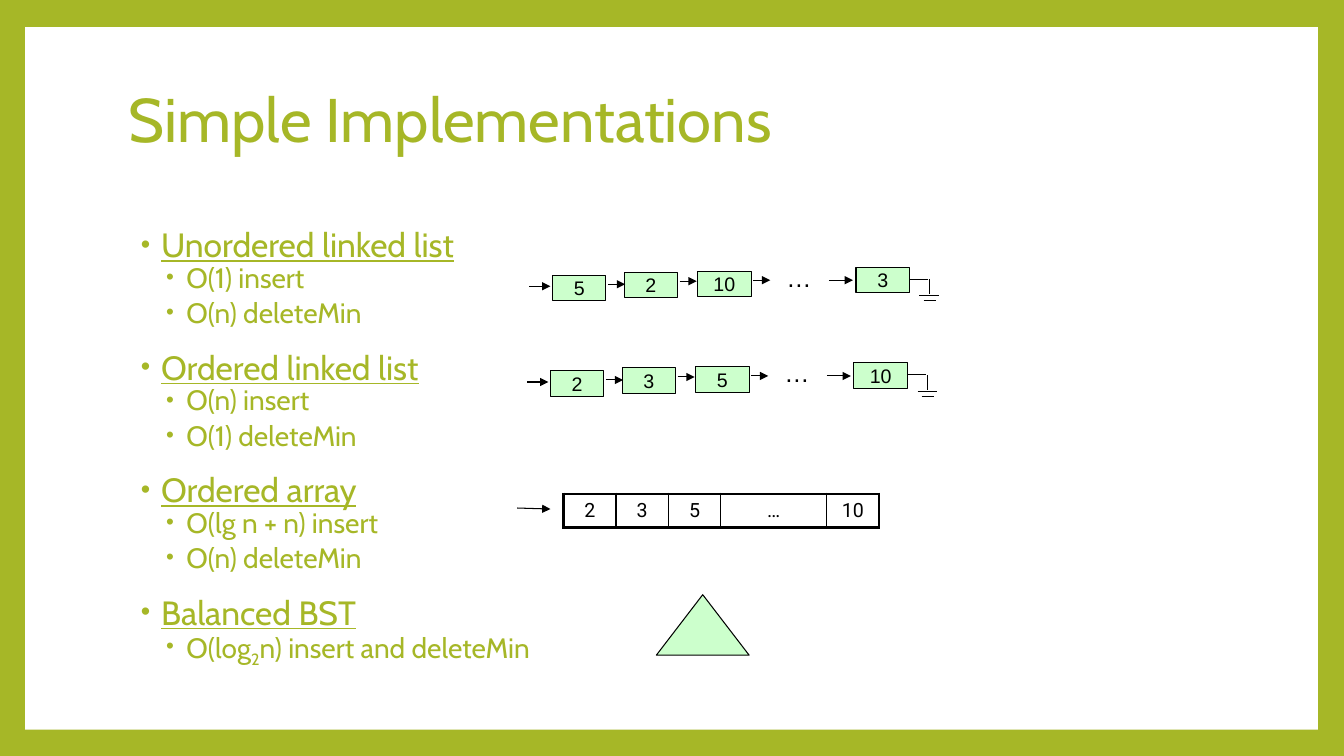
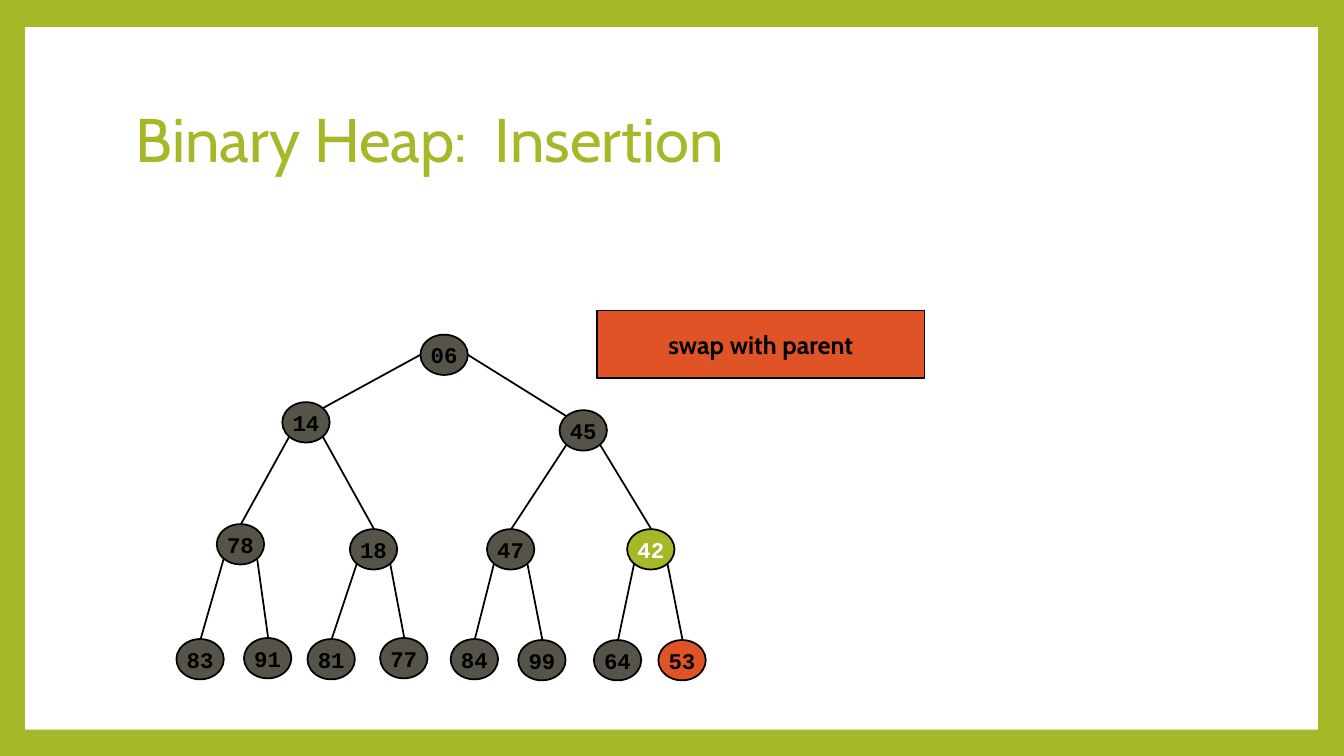
from dataclasses import dataclass

from lxml.etree import SubElement
from pptx import Presentation
from pptx.dml.color import RGBColor
from pptx.enum.shapes import MSO_CONNECTOR, MSO_SHAPE
from pptx.enum.text import MSO_ANCHOR, PP_ALIGN
from pptx.oxml.ns import qn
from pptx.util import Emu, Pt

SCALE = 9144  # EMU in one px, at 100 px to the inch


def px(length):
    return Emu(round(length * SCALE))


# ---- Theme: colours, fonts, type sizes, line widths ----
@dataclass(frozen=True)
class Theme:
    green: str = "A6B727"
    white: str = "FFFFFF"
    black: str = "000000"
    mint: str = "CCFFCC"
    stone: str = "565349"
    orange: str = "DF5327"
    main_font: str = "Cabin"
    node_font: str = "Arial"
    cell_font: str = "Roboto"
    heap_font: str = "Courier New"
    title_size: int = 44
    heading_size: int = 24
    detail_size: int = 20
    label_size: int = 18
    key_size: int = 16
    node_size: int = 14
    thin: float = 0.75
    rule: float = 1
    medium: float = 1.25
    thick: float = 2.25


THEME = Theme()


# ---- Content ----
# Each group is a heading and its details; every second run of a detail is a subscript.
IMPLEMENTATIONS = [
    ("Unordered linked list", [["O(1) insert"], ["O(n) deleteMin"]]),
    ("Ordered linked list", [["O(n) insert"], ["O(1) deleteMin"]]),
    ("Ordered array", [["O(lg n + n) insert"], ["O(n) deleteMin"]]),
    ("Balanced BST", [["O(log", "2", "n) insert and deleteMin"]]),
]

# Level order: key, left, top; the children of node i are 2i + 1 and 2i + 2.
HEAP = [
    ("06", 417, 332),
    ("14", 280, 399), ("45", 555, 407),
    ("78", 215, 520), ("18", 347, 525), ("47", 483, 525), ("42", 622, 525),
    ("83", 175, 634), ("91", 242, 633), ("81", 305, 634), ("77", 377, 633),
    ("84", 447, 634), ("99", 514, 635), ("64", 589, 635), ("53", 653, 635),
]
HEAP_WIDTH, HEAP_HEIGHT = 47, 40
HIGHLIGHTS = {"42": (THEME.green, THEME.white), "53": (THEME.orange, THEME.black)}


# ---- Elements ----
def rgb(color):
    return RGBColor.from_string(color)


def add_span(para, text, size, font, color, bold=None, underline=None):
    span = para.add_run()
    span.text = text
    span.font.size = Pt(size)
    span.font.name = font
    span.font.color.rgb = rgb(color)
    span.font.bold = bold
    span.font.underline = underline
    return span


def add_box(page, left, top, width, height, anchor=MSO_ANCHOR.TOP, wrap=True):
    box = page.shapes.add_textbox(px(left), px(top), px(width), px(height))
    box.text_frame.word_wrap = wrap
    box.text_frame.vertical_anchor = anchor
    return box.text_frame


def add_figure(page, kind, left, top, width, height, fill, line_width=None):
    shape = page.shapes.add_shape(kind, px(left), px(top), px(width), px(height))
    shape.shadow.inherit = False
    shape.fill.solid()
    shape.fill.fore_color.rgb = rgb(fill)
    if line_width is None:
        shape.line.fill.background()
    else:
        shape.line.color.rgb = rgb(THEME.black)
        shape.line.width = Pt(line_width)
    return shape


def add_label(shape, text, size, font, color=THEME.black, bold=None):
    frame = shape.text_frame
    frame.word_wrap = False
    frame.vertical_anchor = MSO_ANCHOR.MIDDLE
    frame.margin_left = frame.margin_right = frame.margin_top = frame.margin_bottom = 0
    para = frame.paragraphs[0]
    para.alignment = PP_ALIGN.CENTER
    add_span(para, text, size, font, color, bold)


def add_line(page, start, end, width=THEME.thin, arrow=False):
    line = page.shapes.add_connector(
        MSO_CONNECTOR.STRAIGHT, *(px(value) for value in (*start, *end)))
    line.line.color.rgb = rgb(THEME.black)
    line.line.width = Pt(width)
    properties = line.element.spPr
    if arrow:
        SubElement(properties.find(qn("a:ln")), qn("a:tailEnd"), type="triangle")
    SubElement(properties, qn("a:effectLst"))


def add_page(deck, title, left, top):
    page = deck.slides.add_slide(deck.slide_layouts[6])
    add_figure(page, MSO_SHAPE.RECTANGLE, 25, 27, 1282, 697, THEME.white)
    para = add_box(page, left, top, 1080, 148, MSO_ANCHOR.MIDDLE).paragraphs[0]
    para.line_spacing = 0.9
    add_span(para, title, THEME.title_size, THEME.main_font, THEME.green)
    return page


def format_bullet(para, indent, before, after):
    para.line_spacing = 0.8
    para.space_before = Pt(before)
    para.space_after = Pt(after)
    properties = para._p.get_or_add_pPr()
    properties.set("marL", str(px(indent)))
    properties.set("indent", str(px(-20)))
    color = SubElement(properties, qn("a:buClr"))
    SubElement(color, qn("a:srgbClr"), val=THEME.green)
    SubElement(properties, qn("a:buSzPct"), val="80000")
    SubElement(properties, qn("a:buFont"), typeface="Arial")
    SubElement(properties, qn("a:buChar"), char="•")


def add_outline(page, groups):
    frame = add_box(page, 125, 225, 1080, 442)
    para = frame.paragraphs[0]
    for number, (heading, details) in enumerate(groups):
        if number:
            para = frame.add_paragraph()
        format_bullet(para, 25, 14, 0)
        add_span(para, heading, THEME.heading_size, THEME.main_font, THEME.green,
                 underline=True)
        for detail in details:
            para = frame.add_paragraph()
            para.level = 1
            format_bullet(para, 50, 2, 4)
            for position, text in enumerate(detail):
                span = add_span(para, text, THEME.detail_size, THEME.main_font, THEME.green)
                if position % 2:
                    span.font._element.set("baseline", "-25000")


def add_linked_list(page, left, top, values):
    """Draw a list whose first node has its corner at left, top."""
    def at(x, y):
        return left + x, top + y

    for value, x, y in zip(values, (0, 71, 144, 301), (0, -3, -4, -8)):
        node = add_figure(page, MSO_SHAPE.RECTANGLE, *at(x, y), 53, 25,
                          THEME.mint, THEME.thin)
        add_label(node, value, THEME.node_size, THEME.node_font)
    for x, y, length in ((-23, 11, 21), (55, 9, 17), (126, 6, 17), (199, 5, 17), (274, 5, 24)):
        add_line(page, at(x, y), at(x + length, y), arrow=True)
    dots = add_box(page, *at(222, -18), 45, 40, wrap=False).paragraphs[0]
    add_span(dots, "…", THEME.label_size, THEME.node_font, THEME.black)
    # Ground symbol: lead, drop and two bars
    for start, end in (((354, 4), (372, 4)), ((374, 4), (374, 19)),
                       ((364, 20), (383, 20)), ((368, 25), (380, 25))):
        add_line(page, at(*start), at(*end))


def add_border(cell, side, width):
    border = SubElement(cell._tc.get_or_add_tcPr(), qn(f"a:ln{side}"), w=str(Pt(width)))
    fill = SubElement(border, qn("a:solidFill"))
    SubElement(fill, qn("a:srgbClr"), val=THEME.black)


def add_array(page, left, top, values, widths, height):
    table = page.shapes.add_table(
        1, len(values), px(left), px(top), px(sum(widths)), px(height)).table
    table.first_row = table.horz_banding = False
    table.rows[0].height = px(height)
    last = len(values) - 1
    for column, (value, width) in enumerate(zip(values, widths)):
        table.columns[column].width = px(width)
        cell = table.cell(0, column)
        add_border(cell, "L", THEME.thick if column == 0 else THEME.rule)
        add_border(cell, "R", THEME.thick if column == last else THEME.rule)
        add_border(cell, "T", THEME.thick)
        add_border(cell, "B", THEME.thick)
        cell.fill.background()
        cell.vertical_anchor = MSO_ANCHOR.MIDDLE
        cell.margin_top = cell.margin_bottom = 0
        para = cell.text_frame.paragraphs[0]
        para.alignment = PP_ALIGN.CENTER
        add_span(para, value, THEME.node_size, THEME.cell_font, THEME.black)


def heap_point(node, across, down):
    """Point on a node, in half widths and half heights from its centre."""
    _, left, top = node
    return (left + round(HEAP_WIDTH / 2 * (1 + across)),
            top + round(HEAP_HEIGHT / 2 * (1 + down)))


def add_heap(page, nodes):
    diagonal = 0.71
    for index in range(1, len(nodes)):
        parent, child = nodes[(index - 1) // 2], nodes[index]
        side = -1 if index % 2 else 1
        if index <= 2:  # the root's edges leave from its sides
            start = heap_point(parent, side, 0)
            end = heap_point(child, -side * diagonal, -diagonal)
        else:
            start = heap_point(parent, side * diagonal, diagonal)
            end = heap_point(child, 0, -1)
        add_line(page, start, end, THEME.medium)
    for key, left, top in nodes:
        fill, color = HIGHLIGHTS.get(key, (THEME.stone, THEME.black))
        node = add_figure(page, MSO_SHAPE.OVAL, left, top, HEAP_WIDTH, HEAP_HEIGHT,
                          fill, THEME.medium)
        add_label(node, key, THEME.key_size, THEME.heap_font, color, bold=True)


# ---- Slides ----
def add_implementations(deck):
    page = add_page(deck, "Simple Implementations", 118, 48)
    add_outline(page, IMPLEMENTATIONS)
    add_linked_list(page, 548, 273, ["5", "2", "10", "3"])
    add_linked_list(page, 546, 368, ["2", "3", "5", "10"])
    add_array(page, 559, 490, ["2", "3", "5", "…", "10"], [52, 52, 52, 105, 52], 33)
    add_line(page, (513, 504), (546, 505), arrow=True)
    add_figure(page, MSO_SHAPE.ISOSCELES_TRIANGLE, 651, 590, 92, 60, THEME.mint, THEME.thin)


def add_insertion(deck):
    page = add_page(deck, "Binary Heap:  Insertion", 125, 67)
    add_heap(page, HEAP)
    callout = add_figure(page, MSO_SHAPE.RECTANGLE, 592, 308, 325, 67,
                         THEME.orange, THEME.medium)
    add_label(callout, "swap with parent", THEME.label_size, THEME.main_font, bold=True)


def main():
    deck = Presentation()
    deck.slide_width, deck.slide_height = px(1333), px(750)
    backdrop = deck.slide_master.background.fill
    backdrop.solid()
    backdrop.fore_color.rgb = rgb(THEME.green)
    add_implementations(deck)
    add_insertion(deck)
    deck.save("out.pptx")


if __name__ == "__main__":
    main()
